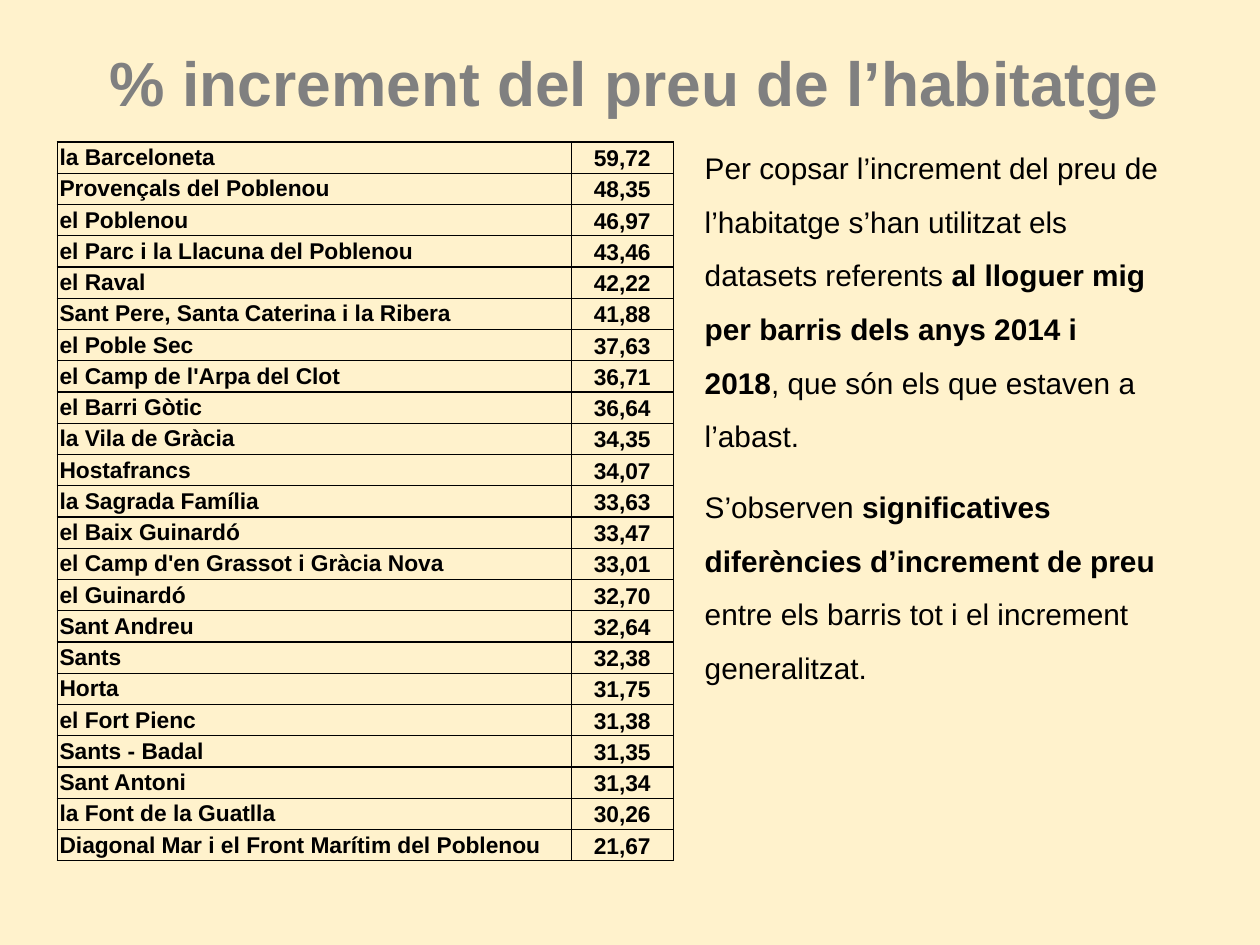
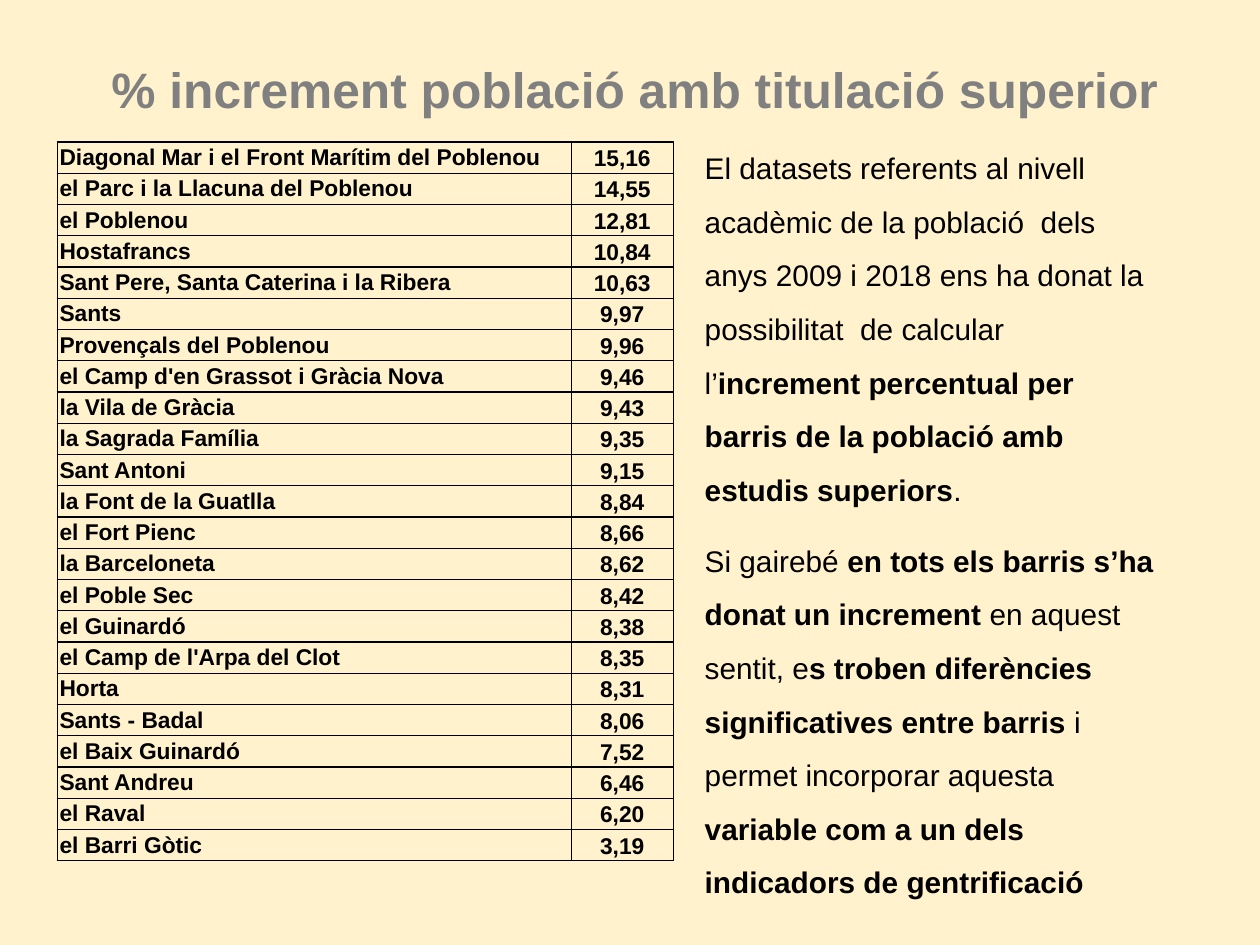
from lxml import etree
from pptx import Presentation
from pptx import util as u
from pptx.dml.color import RGBColor
from pptx.enum import text
from pptx.oxml.ns import qn

PAPER, GREY, INK = "FFF2CC", "808080", "000000"
FONT = "Arial"
# left, top, width, height in percent of the slide
TITLE_AREA = 7.53, 2.4, 85, 10.93
BODY_AREA = 55.43, 13.33, 37.1, 84.27
TABLE_AREA = 4.53, 15.03, 48.9, 76
NAME_PERCENT = 83.44
TOP, MIDDLE, BOTTOM = (text.MSO_ANCHOR.TOP, text.MSO_ANCHOR.MIDDLE,
                       text.MSO_ANCHOR.BOTTOM)
LEFT, CENTER, RIGHT = (text.PP_ALIGN.LEFT, text.PP_ALIGN.CENTER,
                       text.PP_ALIGN.RIGHT)

prs = Presentation()
prs.slide_width, prs.slide_height = u.Inches(10), u.Inches(7.5)


def area(percents):
    sizes = (prs.slide_width, prs.slide_height) * 2
    return [int(size * pc / 100) for size, pc in zip(sizes, percents)]


def style(font, size, color, bold):
    font.name, font.size, font.bold = FONT, u.Pt(size), bold
    font.color.rgb = RGBColor.from_string(color)


# title, title size, body paragraphs (** switches bold), table rows
SLIDES = [
    ("% increment del preu de l’habitatge", 35.6, [
        "Per copsar l’increment del preu de l’habitatge s’han utilitzat els "
        "datasets referents **al lloguer mig per barris dels anys 2014 i 2018**"
        ", que són els que estaven a l’abast.",
        "S’observen **significatives diferències d’increment de preu** entre "
        "els barris tot i el increment generalitzat.",
    ], [
        ("la Barceloneta", "59,72"),
        ("Provençals del Poblenou", "48,35"),
        ("el Poblenou", "46,97"),
        ("el Parc i la Llacuna del Poblenou", "43,46"),
        ("el Raval", "42,22"),
        ("Sant Pere, Santa Caterina i la Ribera", "41,88"),
        ("el Poble Sec", "37,63"),
        ("el Camp de l'Arpa del Clot", "36,71"),
        ("el Barri Gòtic", "36,64"),
        ("la Vila de Gràcia", "34,35"),
        ("Hostafrancs", "34,07"),
        ("la Sagrada Família", "33,63"),
        ("el Baix Guinardó", "33,47"),
        ("el Camp d'en Grassot i Gràcia Nova", "33,01"),
        ("el Guinardó", "32,70"),
        ("Sant Andreu", "32,64"),
        ("Sants", "32,38"),
        ("Horta", "31,75"),
        ("el Fort Pienc", "31,38"),
        ("Sants - Badal", "31,35"),
        ("Sant Antoni", "31,34"),
        ("la Font de la Guatlla", "30,26"),
        ("Diagonal Mar i el Front Marítim del Poblenou", "21,67"),
    ]),
    ("% increment població amb titulació superior", 28.4, [
        "El datasets referents al nivell acadèmic de la població  dels anys "
        "2009 i 2018 ens ha donat la possibilitat  de calcular l’**increment "
        "percentual per barris de la població amb estudis superiors**.",
        "Si gairebé **en tots els barris s’ha donat un increment** en aquest "
        "sentit, e**s troben diferències significatives entre barris** i permet "
        "incorporar aquesta **variable com a un dels indicadors de "
        "gentrificació",
    ], [
        ("Diagonal Mar i el Front Marítim del Poblenou", "15,16"),
        ("el Parc i la Llacuna del Poblenou", "14,55"),
        ("el Poblenou", "12,81"),
        ("Hostafrancs", "10,84"),
        ("Sant Pere, Santa Caterina i la Ribera", "10,63"),
        ("Sants", "9,97"),
        ("Provençals del Poblenou", "9,96"),
        ("el Camp d'en Grassot i Gràcia Nova", "9,46"),
        ("la Vila de Gràcia", "9,43"),
        ("la Sagrada Família", "9,35"),
        ("Sant Antoni", "9,15"),
        ("la Font de la Guatlla", "8,84"),
        ("el Fort Pienc", "8,66"),
        ("la Barceloneta", "8,62"),
        ("el Poble Sec", "8,42"),
        ("el Guinardó", "8,38"),
        ("el Camp de l'Arpa del Clot", "8,35"),
        ("Horta", "8,31"),
        ("Sants - Badal", "8,06"),
        ("el Baix Guinardó", "7,52"),
        ("Sant Andreu", "6,46"),
        ("el Raval", "6,20"),
        ("el Barri Gòtic", "3,19"),
    ]),
]

for title, title_size, body, rows in SLIDES:
    s = prs.slides.add_slide(prs.slide_layouts[6])
    s.background.fill.solid()
    s.background.fill.fore_color.rgb = RGBColor.from_string(PAPER)

    for box, paragraphs, size, color, anchor, align, spacing in (
            (TITLE_AREA, ["**" + title], title_size, GREY, BOTTOM, RIGHT, 0.9),
            (BODY_AREA, body, 17, INK, TOP, LEFT, 1.5)):
        tf = s.shapes.add_textbox(*area(box)).text_frame
        tf.word_wrap, tf.vertical_anchor = True, anchor
        tf.margin_left = tf.margin_right = u.Inches(0.05)
        tf.margin_top = tf.margin_bottom = u.Inches(0.05)
        for i, paragraph in enumerate(paragraphs):
            p = tf.add_paragraph() if i else tf.paragraphs[0]
            p.alignment, p.line_spacing = align, spacing
            p.space_before = u.Pt(10 if i else 0)
            for j, part in enumerate(paragraph.split("**")):
                if part:
                    r = p.add_run()
                    r.text = part
                    style(r.font, size, color, j % 2 == 1)

    table = s.shapes.add_table(len(rows), 2, *area(TABLE_AREA)).table
    table.first_row = table.horz_banding = False
    width = area(TABLE_AREA)[2]
    table.columns[0].width = int(width * NAME_PERCENT / 100)
    table.columns[1].width = width - table.columns[0].width
    for i, row in enumerate(rows):
        for j, value in enumerate(row):
            cell = table.cell(i, j)
            cell.text_frame.text = value
            cell.vertical_anchor = BOTTOM if j else MIDDLE
            cell.margin_left = cell.margin_right = u.Inches(0.02)
            cell.margin_top = cell.margin_bottom = u.Pt(1.13)
            p = cell.text_frame.paragraphs[0]
            p.alignment = CENTER if j else LEFT
            style(p.runs[0].font, 13, INK, True)
            tcPr = cell._tc.get_or_add_tcPr()
            for side in ("a:lnL", "a:lnR", "a:lnT", "a:lnB"):
                ln = etree.SubElement(tcPr, qn(side), w=str(u.Pt(0.75)))
                fill = etree.SubElement(ln, qn("a:solidFill"))
                etree.SubElement(fill, qn("a:srgbClr"), val=INK)
            cell.fill.background()

prs.save("out.pptx")
